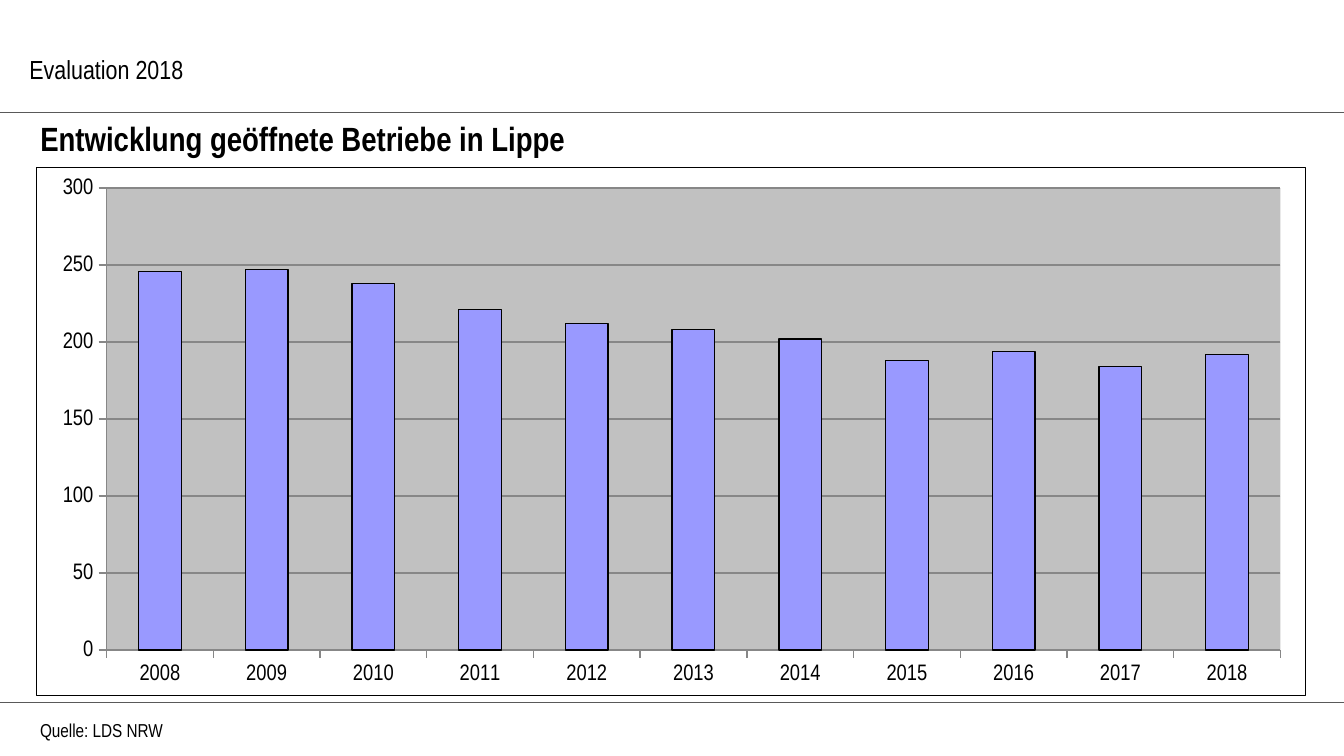
"""Build the slide on the development of opened businesses in Lippe."""
import pptx
import pptx.chart.data
import pptx.dml.color
import pptx.enum.chart
import pptx.enum.shapes
import pptx.enum.text
import pptx.oxml
import pptx.oxml.ns
import pptx.util
from pptx.util import Inches

FONT = "Arial Narrow"
NS = pptx.oxml.ns.nsdecls("a", "c")


def color(hex_value):
    """Return the colour for a hex string."""
    return pptx.dml.color.RGBColor.from_string(hex_value)


def write(s, box, text, size, bold=False):
    """Place a text shape and fill it with one formatted line."""
    s.left, s.top, s.width, s.height = [Inches(v) for v in box]
    tf = s.text_frame
    tf.text = text
    tf.word_wrap = True
    tf.auto_size = pptx.enum.text.MSO_AUTO_SIZE.NONE
    tf.vertical_anchor = pptx.enum.text.MSO_ANCHOR.TOP
    p = tf.paragraphs[0]
    p.alignment = pptx.enum.text.PP_ALIGN.LEFT
    r = p.runs[0]
    r.font.name = FONT
    r.font.size = pptx.util.Pt(size)
    r.font.bold = bold
    r.font.color.rgb = color("000000")


prs = pptx.Presentation()
prs.slide_width = Inches(10)
prs.slide_height = Inches(10 * 9 / 16)
slide = prs.slides.add_slide(prs.slide_layouts[5])

for x, y in [(-0.04, 5.23), (0, 0.84)]:
    line = slide.shapes.add_connector(
        pptx.enum.shapes.MSO_CONNECTOR.STRAIGHT,
        Inches(x), Inches(y), Inches(10), Inches(y))
    line.line.color.rgb = color("595959")
    line.line.width = pptx.util.Pt(0.5)
    line._element.spPr.append(pptx.oxml.parse_xml(f"<a:effectLst {NS}/>"))

write(slide.shapes.title, (0.2, 0.83, 9.42, 0.4),
      "Entwicklung geöffnete Betriebe in Lippe", 18, True)
for box, text, size in [
    ((0.2, 5.3, 1.42, 0.27), "Quelle: LDS NRW", 10),
    ((0.12, 0.35, 9.69, 0.64), "Evaluation 2018", 14),
]:
    write(slide.shapes.add_textbox(0, 0, 0, 0), box, text, size)

data = pptx.chart.data.CategoryChartData()
data.categories = [str(year) for year in range(2008, 2019)]
data.add_series("Series 1", [246, 247, 238, 221, 212, 208, 202, 188, 194, 184, 192])
chart = slide.shapes.add_chart(
    pptx.enum.chart.XL_CHART_TYPE.COLUMN_CLUSTERED,
    Inches(0.27), Inches(1.24), Inches(9.45), Inches(3.94), data).chart
chart.has_legend = False
chart.has_title = False
chart.font.name = FONT
chart.font.size = pptx.util.Pt(12)
chart.font.color.rgb = color("000000")

plot = chart.plots[0]
plot.gap_width = 150
plot.vary_by_categories = False
series = plot.series[0]
series.format.fill.solid()
series.format.fill.fore_color.rgb = color("9999FF")
series.format.line.color.rgb = color("000000")
series.format.line.width = pptx.util.Pt(0.75)

value_axis = chart.value_axis
value_axis.minimum_scale, value_axis.maximum_scale = 0, 300
value_axis.major_unit = 50
value_axis.has_major_gridlines = True
for axis in (value_axis, chart.category_axis):
    axis.major_tick_mark = pptx.enum.chart.XL_TICK_MARK.OUTSIDE
    axis.minor_tick_mark = pptx.enum.chart.XL_TICK_MARK.NONE
for fmt in (value_axis.format, chart.category_axis.format,
            value_axis.major_gridlines.format):
    fmt.line.color.rgb = color("878787")
    fmt.line.width = pptx.util.Pt(0.75)

chart_xml = chart._chartSpace.chart
plot_area = chart_xml.plotArea
for layout in plot_area.findall(pptx.oxml.ns.qn("c:layout")):
    plot_area.remove(layout)
plot_area.insert(0, pptx.oxml.parse_xml(
    f'<c:layout {NS}><c:manualLayout><c:layoutTarget val="inner"/>'
    '<c:xMode val="edge"/><c:yMode val="edge"/><c:x val="0.055"/>'
    '<c:y val="0.04"/><c:w val="0.925"/><c:h val="0.874"/>'
    '</c:manualLayout></c:layout>'))
plot_area.append(pptx.oxml.parse_xml(
    f'<c:spPr {NS}><a:solidFill><a:srgbClr val="C1C1C1"/></a:solidFill></c:spPr>'))
chart_xml.addnext(pptx.oxml.parse_xml(
    f'<c:spPr {NS}><a:noFill/><a:ln w="6350"><a:solidFill>'
    '<a:srgbClr val="000000"/></a:solidFill></a:ln></c:spPr>'))

prs.save("out.pptx")
